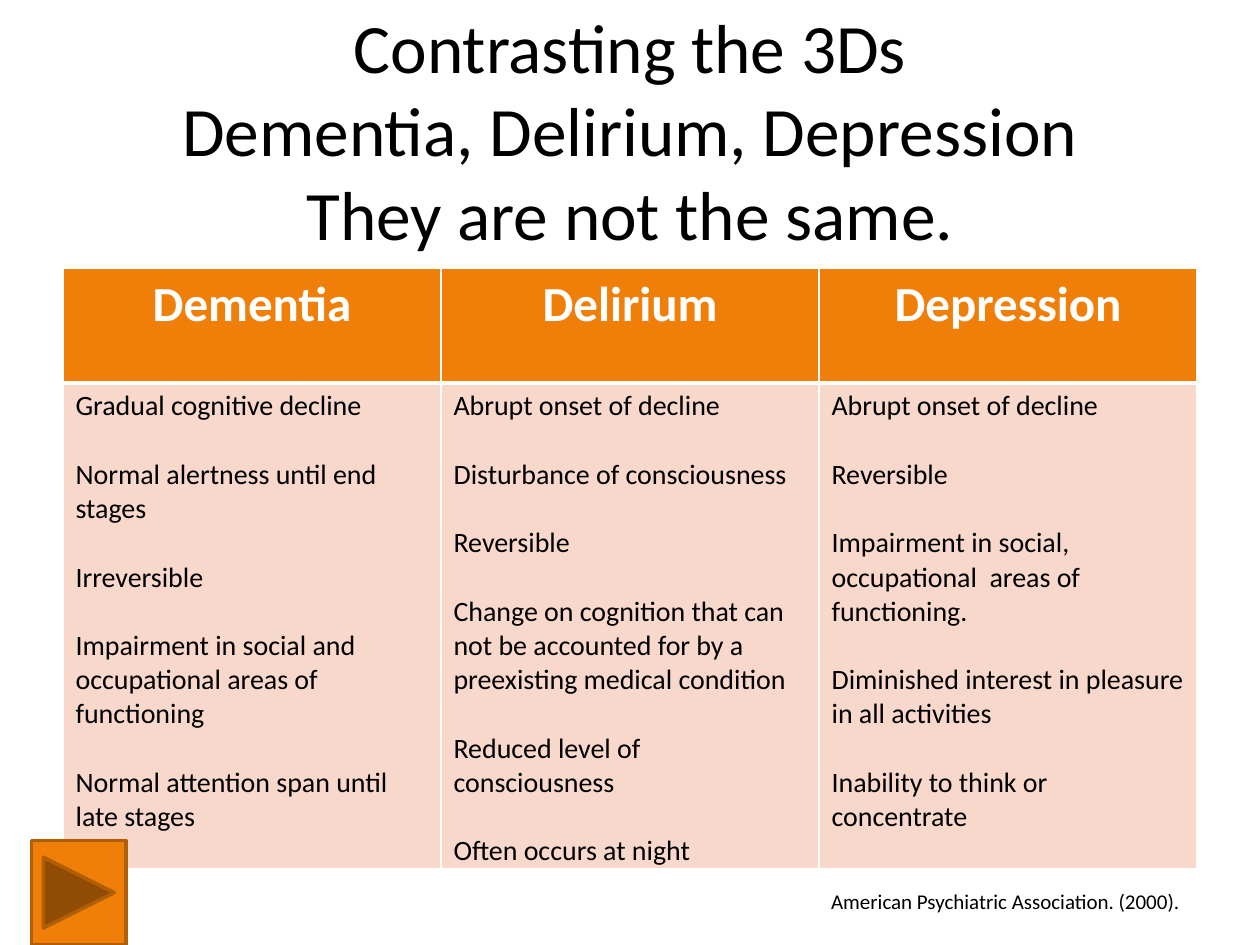
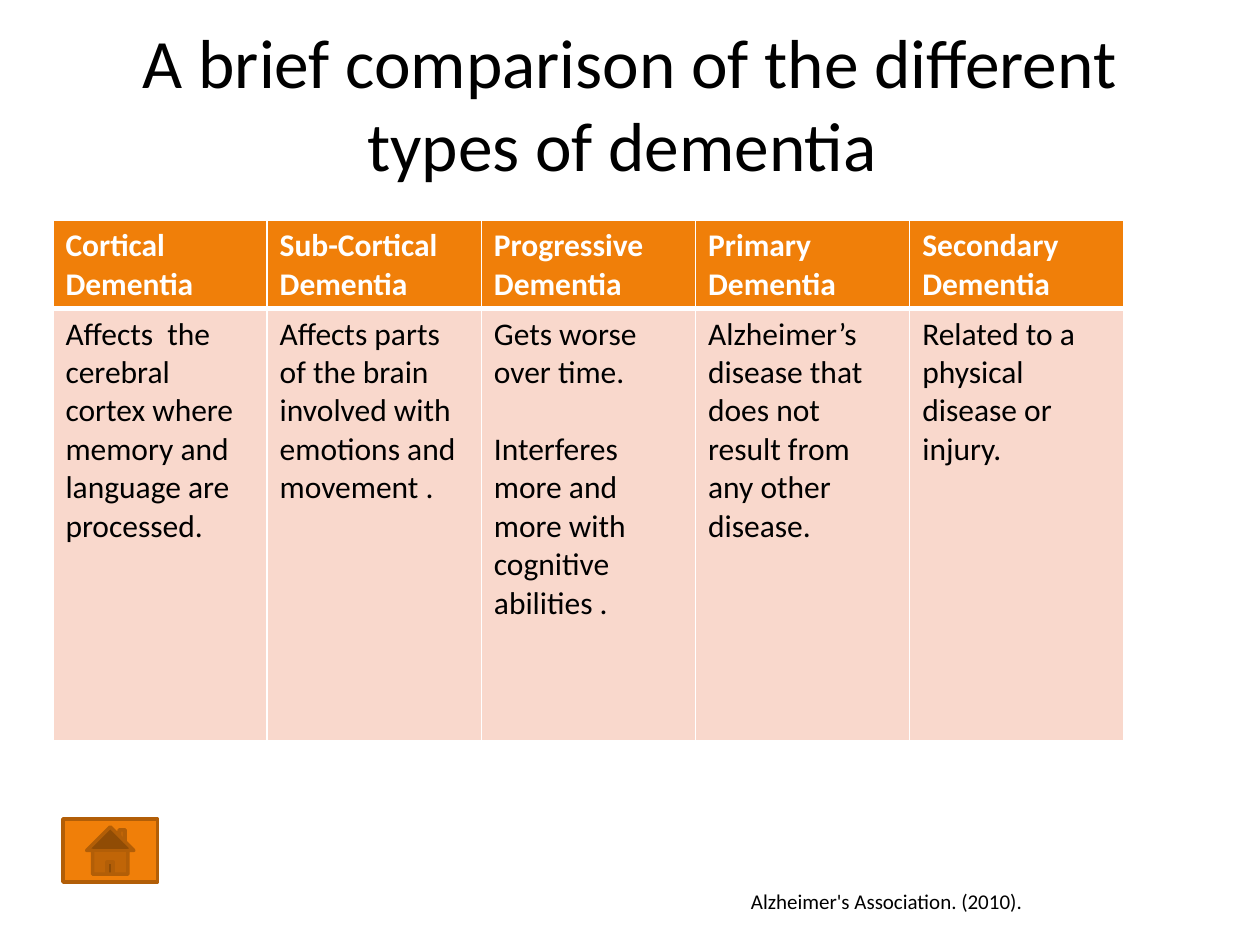
from dataclasses import dataclass
from lxml.etree import SubElement
from pptx import Presentation
from pptx.dml.color import RGBColor as Color
from pptx.enum.shapes import MSO_SHAPE as Preset
from pptx.enum.text import MSO_ANCHOR as Anchor, PP_ALIGN as Align
from pptx.oxml.ns import qn
from pptx.util import Inches, Pt


@dataclass(frozen=True)
class Theme:
    font: str = "Calibri"
    dark: Color = Color(0x00, 0x00, 0x00)
    light: Color = Color(0xFF, 0xFF, 0xFF)
    accent: Color = Color(0xF0, 0x7F, 0x09)
    accent_edge: Color = Color(0xB2, 0x5E, 0x07)
    tint: Color = Color(0xF9, 0xD8, 0xCC)
    title_size: float = 39.6
    source_size: float = 12
    thin: float = 1
    thick: float = 3
    button_line: float = 2


theme = Theme()
presentation = Presentation()
presentation.slide_width, presentation.slide_height = Inches(10), Inches(7.5)
column = presentation.slide_width / 40
row = presentation.slide_height / 30


def place(left, top, width, height):
    return [round(n * unit) for n, unit in zip((left, top, width, height), (column, row) * 2)]


def write(frame, texts, size, color=theme.dark, bold=False, align=Align.LEFT, gap=0):
    frame.word_wrap = True
    font_format = {"name": theme.font, "size": Pt(size), "bold": bold}
    for index, text in enumerate(texts):
        paragraph = frame.add_paragraph() if index else frame.paragraphs[0]
        paragraph.text = text
        paragraph.alignment = align
        paragraph.space_before = Pt(gap if index else 0)
        for run in paragraph.runs:
            for name, value in font_format.items():
                setattr(run.font, name, value)
            run.font.color.rgb = color


pages = [
    {
        "title": "Contrasting the 3Ds\vDementia, Delirium, Depression\vThey are not the same.",
        "title_rows": 5.8,
        "table_at": (2, 8.52, 36),
        "row_heights": (3.64, 15.32),
        "header_size": 28,
        "header_align": Align.CENTER,
        "body_size": 16,
        "entries": {
            "Dementia": [
                "Gradual cognitive decline",
                "Normal alertness until end stages",
                "Irreversible",
                "Impairment in social and occupational areas of functioning",
                "Normal attention span until late stages",
            ],
            "Delirium": [
                "Abrupt onset of decline",
                "Disturbance of consciousness",
                "Reversible",
                "Change on cognition that can not be accounted for by a preexisting medical condition",
                "Reduced level of consciousness",
                "Often occurs at night",
            ],
            "Depression": [
                "Abrupt onset of decline",
                "Reversible",
                "Impairment in social, occupational  areas of\vfunctioning.",
                "Diminished interest in pleasure in all activities",
                "Inability to think or concentrate",
            ],
        },
        "button": Preset.ACTION_BUTTON_FORWARD_OR_NEXT,
        "button_at": (1, 26.68, 3, 3.32),
        "source": "American Psychiatric Association. (2000). ",
        "source_columns": 32,
    },
    {
        "title": "A brief comparison of the different types of dementia ",
        "title_rows": 4.12,
        "table_at": (1.68, 7, 34),
        "row_heights": (2.8, 13.72),
        "header_size": 18,
        "header_align": Align.LEFT,
        "body_size": 18,
        "entries": {
            "Cortical Dementia": [
                "Affects  the cerebral cortex where memory and language are processed."
            ],
            "Sub-Cortical Dementia": [
                "Affects parts of the brain involved with emotions and movement ."
            ],
            "Progressive Dementia": [
                "Gets worse over time.",
                "Interferes more and more with cognitive abilities .",
            ],
            "Primary Dementia": [
                "Alzheimer’s disease that does not result from any other disease."
            ],
            "Secondary Dementia": ["Related to a physical disease or injury."],
        },
        "button": Preset.ACTION_BUTTON_HOME,
        "button_at": (2, 26, 3, 2),
        "source": "Alzheimer's Association. (2010). ",
        "source_columns": 27,
    },
]

for page in pages:
    slide = presentation.slides.add_slide(presentation.slide_layouts[6])

    title = slide.shapes.add_textbox(*place(2, 1.2, 36, page["title_rows"]))
    title.text_frame.vertical_anchor = Anchor.MIDDLE
    write(title.text_frame, [page["title"]], theme.title_size, align=Align.CENTER)

    entries = page["entries"]
    table_box = place(*page["table_at"], sum(page["row_heights"]))
    table = slide.shapes.add_table(2, len(entries), *table_box).table
    table.horz_banding = False
    for table_row, height in zip(table.rows, page["row_heights"]):
        table_row.height = round(height * row)
    for index, (heading, points) in enumerate(entries.items()):
        table.columns[index].width = round(table_box[2] / len(entries))
        header, body = table.cell(0, index), table.cell(1, index)
        write(header.text_frame, [heading], page["header_size"], theme.light, True,
              page["header_align"])
        write(body.text_frame, points, page["body_size"], gap=page["body_size"] * 1.22)
        for cell, fill, thick_side in ((header, theme.accent, "B"), (body, theme.tint, "T")):
            properties = cell._tc.get_or_add_tcPr()
            for side in "LRTB":
                width = theme.thick if side == thick_side else theme.thin
                border = SubElement(properties, qn(f"a:ln{side}"), w=str(Pt(width)))
                solid = SubElement(border, qn("a:solidFill"))
                SubElement(solid, qn("a:srgbClr"), val=str(theme.light))
            cell.fill.solid()
            cell.fill.fore_color.rgb = fill

    button = slide.shapes.add_shape(page["button"], *place(*page["button_at"]))
    button.shadow.inherit = False
    button.fill.solid()
    button.fill.fore_color.rgb = theme.accent
    button.line.color.rgb = theme.accent_edge
    button.line.width = Pt(theme.button_line)

    source = slide.shapes.add_textbox(*place(6, 28, page["source_columns"], 1.2))
    write(source.text_frame, [page["source"]], theme.source_size, align=Align.RIGHT)

presentation.save("out.pptx")
